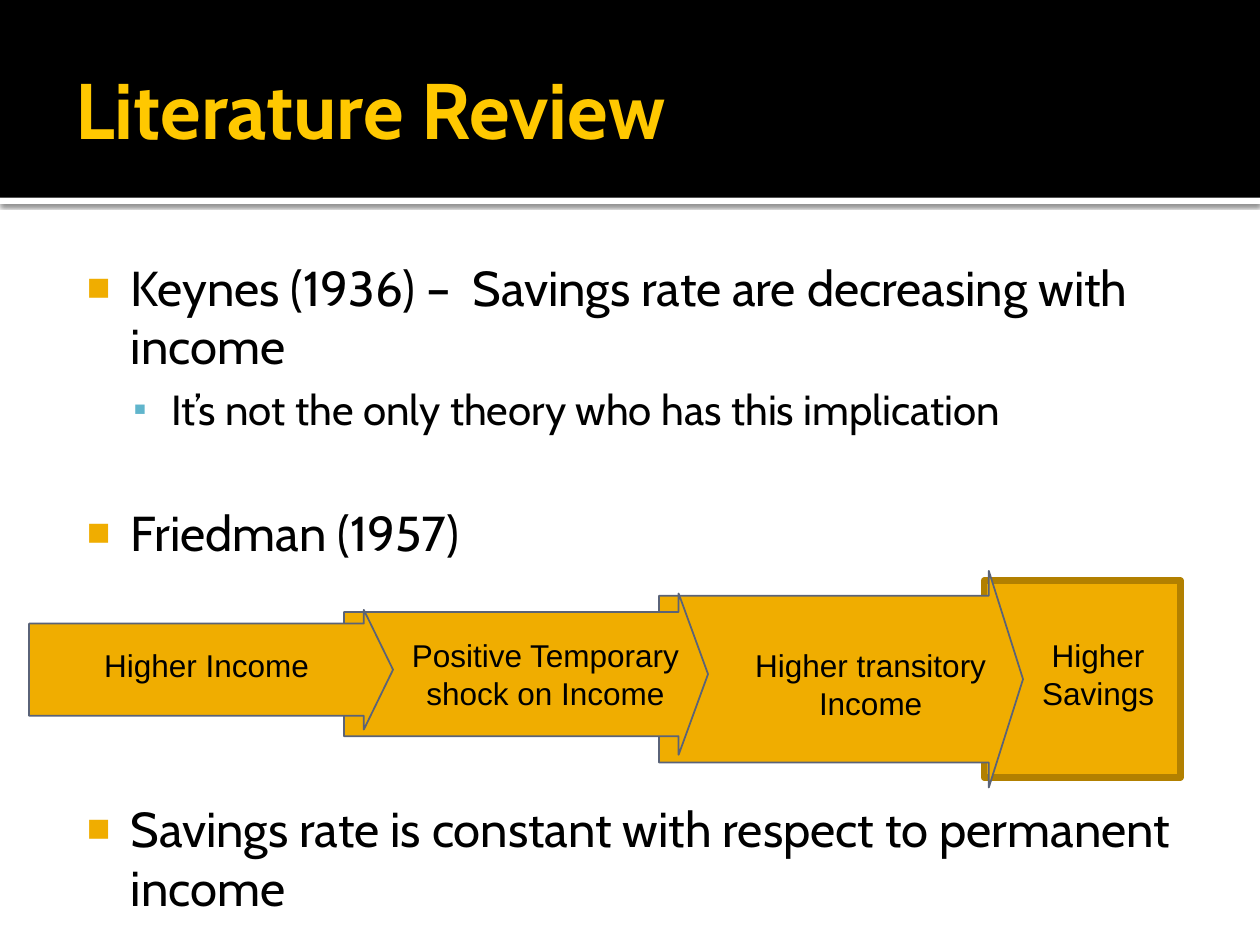
from dataclasses import dataclass

from lxml import etree
from pptx import Presentation
from pptx.dml.color import RGBColor
from pptx.enum.shapes import MSO_SHAPE
from pptx.enum.text import MSO_ANCHOR, MSO_AUTO_SIZE, PP_ALIGN
from pptx.oxml import parse_xml
from pptx.oxml.ns import nsdecls, qn
from pptx.util import Pt

RECTANGLE = MSO_SHAPE.RECTANGLE
ARROW = MSO_SHAPE.RIGHT_ARROW
CENTER = PP_ALIGN.CENTER
TOP = MSO_ANCHOR.TOP
MIDDLE = MSO_ANCHOR.MIDDLE
GROW = MSO_AUTO_SIZE.SHAPE_TO_FIT_TEXT


@dataclass(frozen=True)
class Theme:
    heading_font: str = "Cabin"
    label_font: str = "Arial"
    title_size: float = 45
    body_size: float = 28
    detail_size: float = 24
    label_size: float = 18
    black: str = "000000"
    white: str = "FFFFFF"
    title: str = "FFC800"
    gold: str = "F0AD00"
    dark_gold: str = "B28000"
    slate: str = "5A6378"
    blue: str = "60B5CC"


@dataclass(frozen=True)
class Level:
    size: float
    margin: float
    indent: float
    bullet: str
    color: str
    scale: int


THEME = Theme()
MAIN = Level(THEME.body_size, 34.56, -25.2, "■", THEME.gold, 80)
DETAIL = Level(THEME.detail_size, 57.6, -21.6, "▪", THEME.blue, 90)

BODY = [
    (MAIN, 0, "Keynes (1936) –  Savings rate are decreasing with income"),
    (DETAIL, 5, "It’s not the only theory who has this implication"),
    (MAIN, 39, "Friedman (1957)"),
    (MAIN, 136, "Savings rate is constant with respect to permanent income"),
]
ARROW_LEFT, ARROW_STEP, ARROW_WIDTH = 16.6, 180, 208
ARROWS = [(348.5, 68.4, 0.244), (339.1, 92.2, 0.182), (326.2, 123.8, 0.158)]
LABELS = [
    ("Higher Income", 28, 365.8, 180, 29),
    ("Positive Temporary shock on Income", 224.6, 360, 174.2, 51),
    ("Higher transitory Income", 410.4, 365.8, 174.2, 51),
    ("Higher Savings", 579.6, 360, 95.8, 51),
]


def add_block(page, kind, frame, fill, line=None, line_width=1):
    block = page.shapes.add_shape(kind, *map(Pt, frame))
    block.shadow.inherit = False
    block.fill.solid()
    block.fill.fore_color.rgb = RGBColor.from_string(fill)
    if line:
        block.line.color.rgb = RGBColor.from_string(line)
        block.line.width = Pt(line_width)
    else:
        block.line.fill.background()
    return block


def add_shadow(block):
    effects = block._element.spPr.find(qn("a:effectLst"))
    effects.append(parse_xml(
        f'<a:outerShdw {nsdecls("a")} blurRad="{Pt(2.5)}" dist="{Pt(0.8)}" '
        f'dir="5400000" rotWithShape="0"><a:srgbClr val="{THEME.black}">'
        '<a:alpha val="60000"/></a:srgbClr></a:outerShdw>'))


def add_box(page, frame, insets=(7.2, 3.6, 7.2, 3.6), anchor=TOP):
    box = page.shapes.add_textbox(*map(Pt, frame))
    text = box.text_frame
    text.word_wrap = True
    text.vertical_anchor = anchor
    (text.margin_left, text.margin_top,
     text.margin_right, text.margin_bottom) = map(Pt, insets)
    return text


def add_span(para, words, font, size, color, bold=False):
    span = para.add_run()
    span.text = words
    span.font.name = font
    span.font.size = Pt(size)
    span.font.bold = bold
    span.font.color.rgb = RGBColor.from_string(color)


def set_bullet(para, level):
    properties = para._p.get_or_add_pPr()
    properties.set("marL", str(Pt(level.margin)))
    properties.set("indent", str(Pt(level.indent)))
    color = etree.SubElement(properties, qn("a:buClr"))
    etree.SubElement(color, qn("a:srgbClr"), val=level.color)
    etree.SubElement(properties, qn("a:buSzPct"), val=str(level.scale * 1000))
    etree.SubElement(properties, qn("a:buFont"), typeface=THEME.label_font)
    etree.SubElement(properties, qn("a:buChar"), char=level.bullet)


def add_header(page):
    strip = add_block(page, RECTANGLE, (0, 113, 720, 3.6), THEME.white)
    add_shadow(strip)
    add_block(page, RECTANGLE, (0, 0, 720, 113), THEME.black)
    text = add_box(page, (36, 12.2, 648, 98.6), (7.2, 3.6, 3.6, 3.6), MIDDLE)
    add_span(text.paragraphs[0], "Literature Review", THEME.heading_font,
             THEME.title_size, THEME.title, bold=True)


def add_body(page):
    text = add_box(page, (36, 139.7, 648, 364.3), (4.3, 7.2, 7.2, 3.6))
    for index, (level, gap, words) in enumerate(BODY):
        para = text.add_paragraph() if index else text.paragraphs[0]
        para.space_before = Pt(gap)
        set_bullet(para, level)
        add_span(para, words, THEME.heading_font, level.size, THEME.black)


def add_arrow(page, index):
    top, height, head = ARROWS[index]
    left = ARROW_LEFT + index * ARROW_STEP
    arrow = add_block(page, ARROW, (left, top, ARROW_WIDTH, height),
                      THEME.gold, THEME.slate)
    arrow.adjustments[0] = 0.77
    arrow.adjustments[1] = head


def add_label(page, words, *frame):
    text = add_box(page, frame)
    text.auto_size = GROW
    para = text.paragraphs[0]
    para.alignment = CENTER
    add_span(para, words, THEME.label_font, THEME.label_size, THEME.black)


def main():
    deck = Presentation()
    deck.slide_width, deck.slide_height = Pt(720), Pt(540)
    page = deck.slides.add_slide(deck.slide_layouts[6])
    add_header(page)
    add_block(page, RECTANGLE, (562.3, 331.9, 112.3, 112.3),
              THEME.gold, THEME.dark_gold, 3.78)
    add_body(page)
    for index in reversed(range(len(ARROWS))):
        add_arrow(page, index)
    for label in LABELS:
        add_label(page, *label)
    deck.save("out.pptx")


if __name__ == "__main__":
    main()
